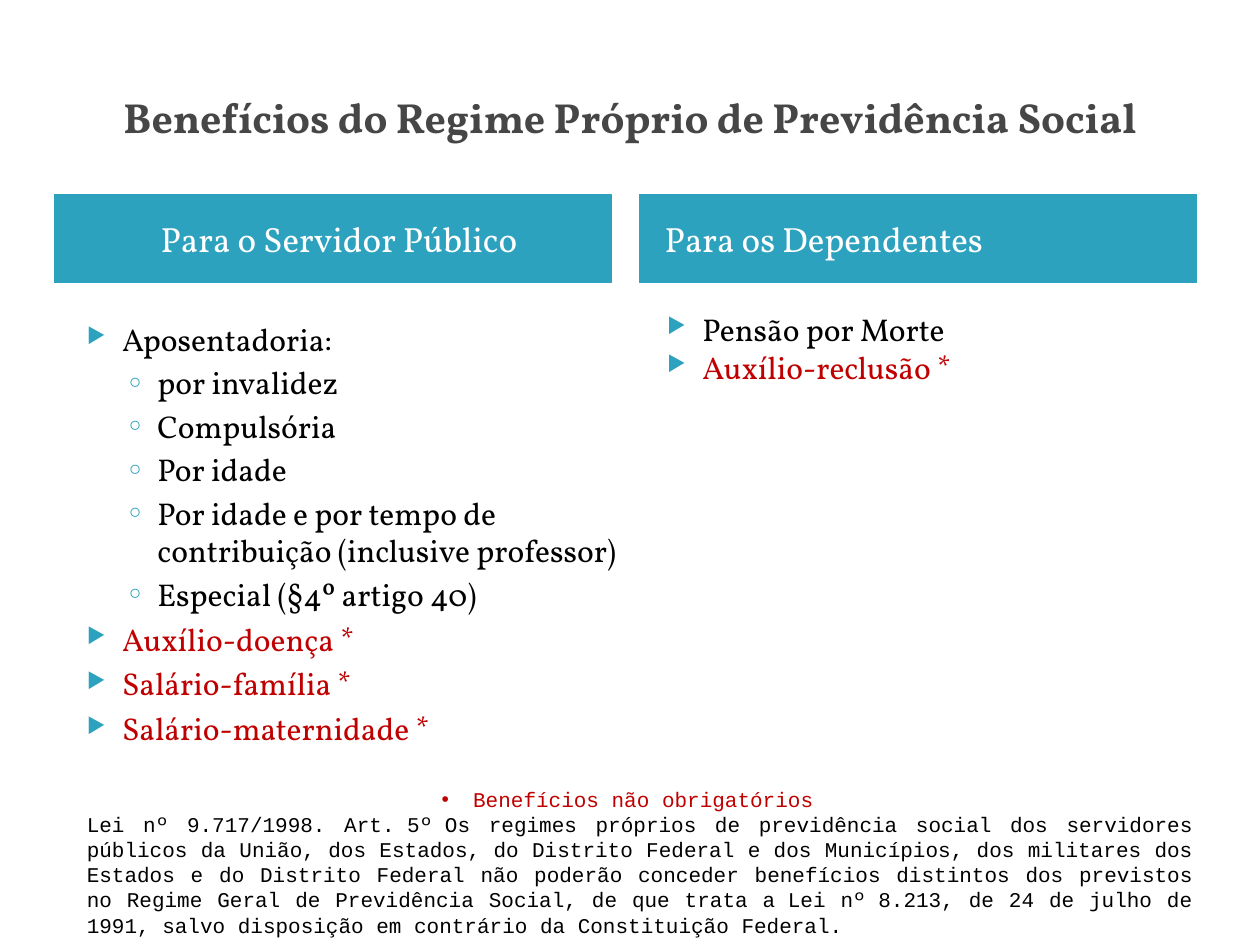
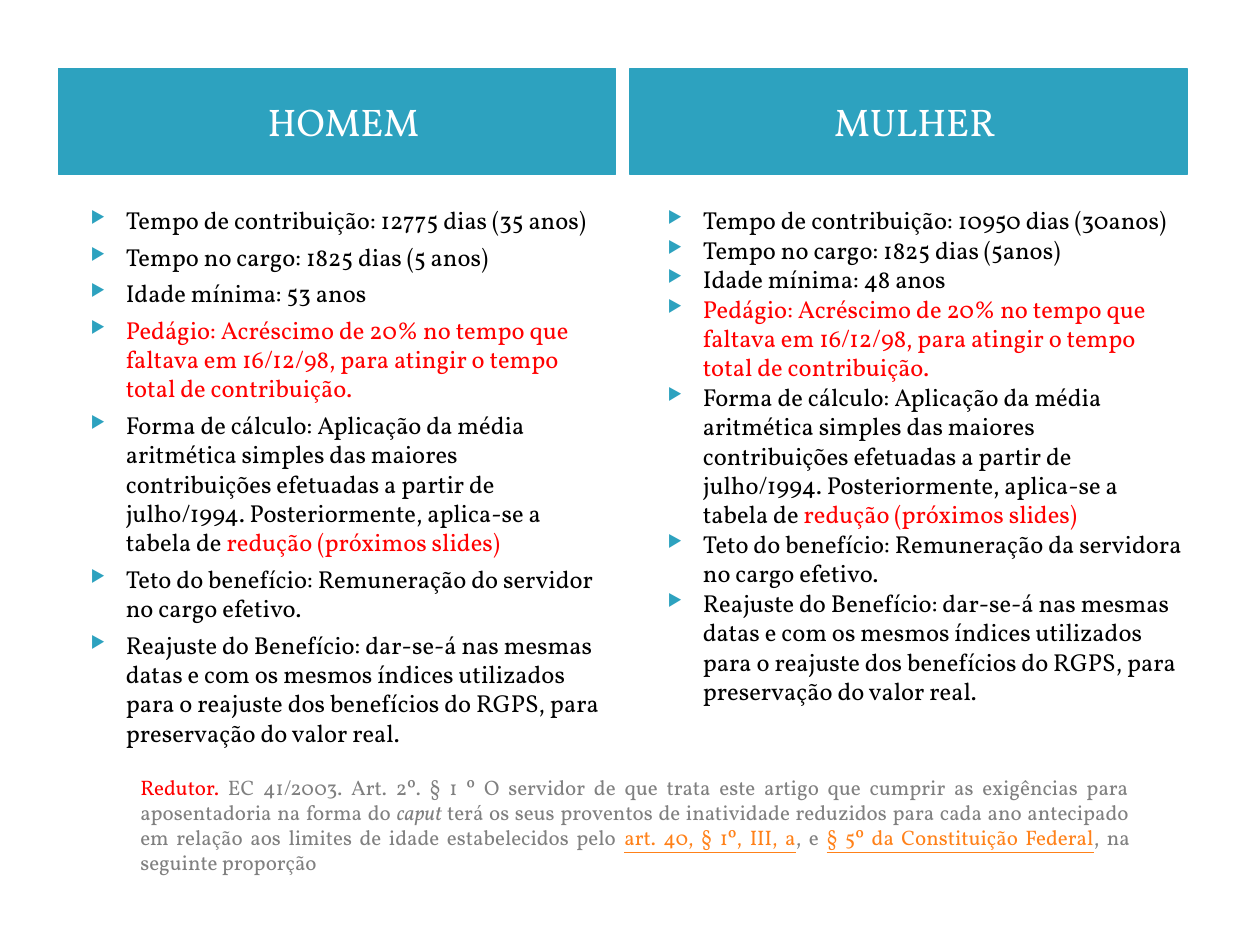
"""Build two slides on the benefits and retirement rules of the Brazilian civil servants' pension scheme."""
from dataclasses import dataclass

from lxml import etree
from pptx import Presentation
from pptx.dml.color import RGBColor
from pptx.enum.shapes import MSO_SHAPE
from pptx.enum.text import MSO_ANCHOR, PP_ALIGN
from pptx.oxml.ns import qn
from pptx.util import Inches, Pt

RECTANGLE = MSO_SHAPE.RECTANGLE
TOP, MIDDLE = MSO_ANCHOR.TOP, MSO_ANCHOR.MIDDLE
LEFT, CENTER, JUSTIFY = PP_ALIGN.LEFT, PP_ALIGN.CENTER, PP_ALIGN.JUSTIFY


@dataclass(frozen=True)
class Theme:
    teal: str = "2DA2BF"
    white: str = "FFFFFF"
    black: str = "000000"
    charcoal: str = "464646"
    gray: str = "808080"
    crimson: str = "C00000"
    red: str = "FF0000"
    orange: str = "FF8119"
    serif: str = "Vollkorn"
    mono: str = "Courier New"
    title: int = 24
    band: int = 20
    wide_band: int = 22
    body: int = 18
    detail: int = 14
    note: int = 12


theme = Theme()
deck = Presentation()
deck.slide_width, deck.slide_height = Inches(10), Inches(7.5)
COLUMN, ROW = deck.slide_width / 100, deck.slide_height / 75
BAND_WIDTH = 44.2
HARD_SPACE = chr(160)
TRIANGLE = dict(bullet="▶", bullet_font="OpenSymbol", bullet_size=68, margin=4, hang=2.8)
RING = dict(bullet="◦", bullet_font="Verdana", margin=6.8, hang=2.5)
DOT = dict(bullet="•", bullet_font="Arial", margin=2.5, hang=2.5, right=2,
           bullet_color=theme.crimson)


def add_box(page, left, top, width, height, band=False, anchor=TOP):
    """Place a text box or a filled band, measured in grid columns and rows."""
    place = [int(left * COLUMN), int(top * ROW), int(width * COLUMN), int(height * ROW)]
    if band:
        box = page.shapes.add_shape(RECTANGLE, *place)
        box.shadow.inherit = False
        box.fill.solid()
        box.fill.fore_color.rgb = box.line.color.rgb = RGBColor.from_string(theme.teal)
        box.line.width = Pt(0.75)
        box.text_frame.margin_left = int(2 * COLUMN)
    else:
        box = page.shapes.add_textbox(*place)
    box.text_frame.word_wrap = True
    box.text_frame.vertical_anchor = anchor
    return box.text_frame


def add_text(frame, text, size, color=theme.black, font=theme.serif, align=LEFT, bold=False,
             before=0, bullet=None, bullet_font=theme.serif, bullet_size=100,
             bullet_color=theme.teal, margin=0, hang=0, right=0):
    """Add a paragraph from a string or from (string, format) spans."""
    first = not frame.text
    para = frame.paragraphs[0] if first else frame.add_paragraph()
    para.alignment = align
    properties = para._p.get_or_add_pPr()
    for name, columns in (("marL", margin), ("indent", -hang), ("marR", right)):
        properties.set(name, str(int(columns * COLUMN)))
    if bullet:
        tint = etree.SubElement(properties, qn("a:buClr"))
        etree.SubElement(tint, qn("a:srgbClr"), val=bullet_color)
        etree.SubElement(properties, qn("a:buSzPct"), val=str(bullet_size * 1000))
        etree.SubElement(properties, qn("a:buFont"), typeface=bullet_font)
        etree.SubElement(properties, qn("a:buChar"), char=bullet)
    para.space_before = Pt(0 if first else before)
    for words, look in [(text, {})] if isinstance(text, str) else text:
        span = para.add_run()
        span.text = words
        span.font.name, span.font.size, span.font.bold = font, Pt(size), bold
        span.font.color.rgb = RGBColor.from_string(look.get("color", color))
        span.font.italic = look.get("italic", False)
        span.font.underline = look.get("underline", False)


blank = deck.slide_layouts[6]
benefits = deck.slides.add_slide(blank)
title = add_box(benefits, 5, 3, 90, 12.5, anchor=MIDDLE)
add_text(title, "Benefícios do Regime Próprio de Previdência Social", theme.title,
         theme.charcoal, align=CENTER, bold=True)

for left, heading, align in ((4.3, "Para o Servidor Público", CENTER),
                             (50.75, "Para os Dependentes", LEFT)):
    band = add_box(benefits, left, 15.45, BAND_WIDTH, 7, band=True, anchor=MIDDLE)
    add_text(band, heading, theme.band, theme.white, align=align)

servant = add_box(benefits, 4.7, 24.9, 46.9, 38)
add_text(servant, "Aposentadoria:", theme.body, **TRIANGLE)
for kind in ("por invalidez", "Compulsória", "Por idade",
             "Por idade e por tempo de contribuição (inclusive professor)",
             "Especial (§4º artigo 40)"):
    add_text(servant, kind, theme.body, before=3.2, **RING)
for optional in ("Auxílio-doença *", "Salário-família *", "Salário-maternidade *"):
    add_text(servant, optional, theme.body, theme.crimson, before=4, **TRIANGLE)

dependents = add_box(benefits, 50.75, 24.1, BAND_WIDTH, 23.2)
add_text(dependents, "Pensão por Morte", theme.body, **TRIANGLE)
add_text(dependents, "Auxílio-reclusão *", theme.body, theme.crimson, **TRIANGLE)

law = add_box(benefits, 5.9, 61.9, 89.8, 11.1)
add_text(law, "Benefícios não obrigatórios", theme.note, theme.crimson, theme.mono, CENTER, **DOT)
add_text(law, f"Lei nº 9.717/1998. Art.{HARD_SPACE}5º{HARD_SPACE}Os regimes próprios de "
         "previdência social dos servidores públicos da União, dos Estados, do Distrito Federal "
         "e dos Municípios, dos militares dos Estados e do Distrito Federal não poderão conceder "
         "benefícios distintos dos previstos no Regime Geral de Previdência Social, de que trata "
         f"a{HARD_SPACE}Lei nº{HARD_SPACE}8.213, de 24 de julho de 1991, salvo disposição em "
         "contrário da Constituição Federal.",
         theme.note, font=theme.mono, align=JUSTIFY)

rules = deck.slides.add_slide(blank)
red = dict(color=theme.red)
for heading, band_left, list_left, before, service, post, age, worker in (
        ("HOMEM", 4.65, 5, 4, "12775 dias (35 anos)", "(5 anos)", 53, "do servidor"),
        ("MULHER", 50, 50.8, 0, "10950 dias (30anos)", "(5anos)", 48, "da servidora")):
    band = add_box(rules, band_left, 5.45, BAND_WIDTH, 8.4, band=True, anchor=MIDDLE)
    add_text(band, heading, theme.wide_band, theme.white, align=CENTER)
    requirements = add_box(rules, list_left, 15.8, BAND_WIDTH, 43.1)
    for requirement in (
            f"Tempo de contribuição: {service}",
            f"Tempo no cargo: 1825 dias {post}",
            f"Idade mínima: {age} anos",
            [("Pedágio: Acréscimo de 20% no tempo que faltava em 16/12/98, para atingir o tempo "
              "total de contribuição.", red)],
            [("Forma de cálculo: Aplicação da média aritmética simples das maiores contribuições "
              "efetuadas a partir de julho/1994. Posteriormente, aplica-se a tabela de ", {}),
             ("redução (próximos slides)", red)],
            f"Teto do benefício: Remuneração {worker} no cargo efetivo.",
            "Reajuste do Benefício: dar-se-á nas mesmas datas e com os mesmos índices utilizados "
            "para o reajuste dos benefícios do RGPS, para preservação do valor real."):
        add_text(requirements, requirement, theme.detail, before=before, **TRIANGLE)

cited = dict(color=theme.orange, underline=True)
reducer = add_box(rules, 10.15, 60.95, 80.5, 9.1)
add_text(reducer, [
    ("Redutor. ", red),
    ("EC 41/2003. Art. 2º. § 1 º O servidor de que trata este artigo que cumprir as exigências "
     "para aposentadoria na forma do ", {}),
    ("caput ", dict(italic=True)),
    ("terá os seus proventos de inatividade reduzidos para cada ano antecipado em relação aos "
     "limites de idade estabelecidos pelo ", {}),
    ("art. 40, § 1º, III, a", cited),
    (", e ", {}),
    ("§ 5º da Constituição Federal", cited),
    (", na seguinte proporção", {})], theme.note, theme.gray, align=JUSTIFY)

deck.save("out.pptx")
